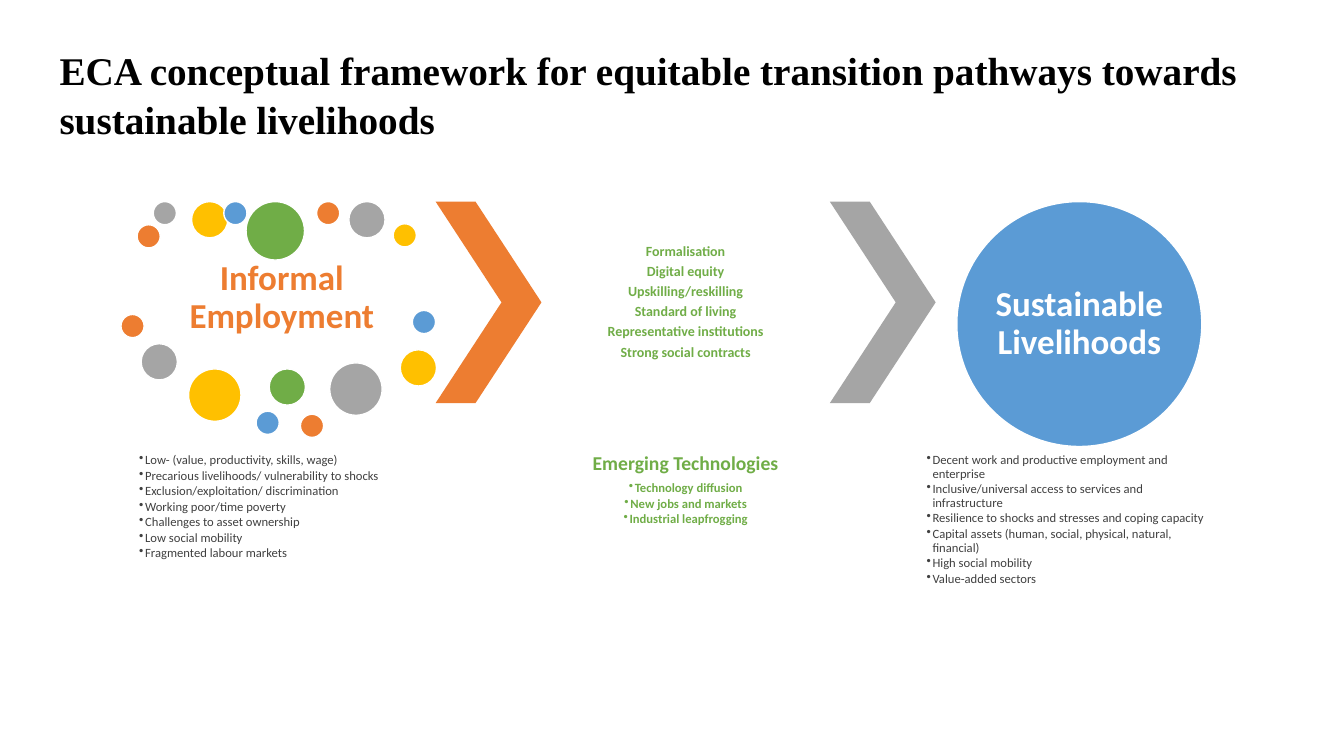
from lxml import etree
from pptx import Presentation
from pptx.dml.color import RGBColor
from pptx.enum.shapes import MSO_SHAPE
from pptx.enum.text import MSO_ANCHOR, MSO_AUTO_SIZE, PP_ALIGN
from pptx.oxml.ns import qn
from pptx.util import Inches, Pt

OVAL, CHEVRON = MSO_SHAPE.OVAL, MSO_SHAPE.CHEVRON
LEFT, CENTER = PP_ALIGN.LEFT, PP_ALIGN.CENTER
TOP, MIDDLE = MSO_ANCHOR.TOP, MSO_ANCHOR.MIDDLE
NO_FIT = MSO_AUTO_SIZE.NONE

ORANGE, GRAY, YELLOW = "ED7D31", "A5A5A5", "FFC000"
BLUE, GREEN, WHITE = "5B9BD5", "70AD47", "FFFFFF"
DARK, BLACK = "404040", "000000"

ROW_TOP, LIST_TOP = 2, 4.49
ROW_HEIGHT, LIST_HEIGHT = 2, 1.76
MIDDLE_LEFT, COLUMN_WIDTH = 5.37, 2.86
CHEVRON_WIDTH = 1.05
SMALL, MEDIUM, LARGE, HUGE = 0.23, 0.36, 0.52, 0.58

DOTS = [
    (1.36, 2.23, SMALL, ORANGE), (1.52, 2, SMALL, GRAY),
    (1.9, 2, MEDIUM, YELLOW), (2.22, 2, SMALL, BLUE),
    (3.14, 2, SMALL, ORANGE), (3.46, 2, MEDIUM, GRAY),
    (3.9, 2.22, SMALL, YELLOW), (4.09, 3.08, SMALL, BLUE),
    (2.44, 2, HUGE, GREEN), (1.2, 3.12, SMALL, ORANGE),
    (1.4, 3.41, MEDIUM, GRAY), (1.87, 3.66, LARGE, YELLOW),
    (2.54, 4.08, SMALL, BLUE), (2.67, 3.66, MEDIUM, GREEN),
    (2.98, 4.11, SMALL, ORANGE), (3.27, 3.6, LARGE, GRAY),
    (3.97, 3.47, MEDIUM, YELLOW),
]
INFORMAL_TRAITS = [
    "Low- (value, productivity, skills, wage)",
    "Precarious livelihoods/ vulnerability to shocks",
    "Exclusion/exploitation/ discrimination",
    "Working poor/time poverty",
    "Challenges to asset ownership",
    "Low social mobility",
    "Fragmented labour markets",
]
PATHWAYS = [
    "Formalisation",
    "Digital equity",
    "Upskilling/reskilling",
    "Standard of living",
    "Representative institutions",
    "Strong social contracts",
]
TECHNOLOGY_EFFECTS = [
    "Technology diffusion",
    "New jobs and markets",
    "Industrial leapfrogging",
]
LIVELIHOOD_TRAITS = [
    "Decent work and productive employment and enterprise",
    "Inclusive/universal access to services and infrastructure",
    "Resilience to shocks and stresses and coping capacity",
    "Capital assets (human, social, physical, natural, financial)",
    "High social mobility",
    "Value-added sectors",
]


def color(hex_text):
    """Turn a hex string into a colour."""
    return RGBColor.from_string(hex_text)


def prepare_frame(frame, anchor=TOP, inset=0.01):
    """Set wrapping, anchor and equal insets of a text frame."""
    frame.word_wrap = True
    frame.auto_size = NO_FIT
    frame.vertical_anchor = anchor
    frame.margin_left = frame.margin_right = Inches(inset)
    frame.margin_top = frame.margin_bottom = Inches(inset)


def add_bullet(para):
    """Give a paragraph a hanging bullet."""
    para.level = 1
    properties = para._p.get_or_add_pPr()
    properties.set("marL", str(Inches(0.06)))
    properties.set("indent", str(-Inches(0.06)))
    etree.SubElement(properties, qn("a:buChar")).set("char", "•")


def write(frame, text, size=9, fill=DARK, bold=False, align=LEFT,
          bullet=False, font="Calibri", spacing=0.9, gap=0.35):
    """Write one formatted paragraph, with a gap relative to its size."""
    para = frame.paragraphs[0]
    if para.runs:
        para = frame.add_paragraph()
    if bullet:
        add_bullet(para)
    para.alignment = align
    para.line_spacing = spacing
    para.space_after = Pt(size * gap)
    span = para.add_run()
    span.text = text
    span.font.name = font
    span.font.size = Pt(size)
    span.font.bold = bold
    span.font.color.rgb = color(fill)


def write_bullets(frame, items, **style):
    """Write a tight bulleted list."""
    for item in items:
        write(frame, item, bullet=True, gap=0.15, **style)


def add_text(page, left, top, width, height, **layout):
    """Add a text box and return its frame."""
    box = page.shapes.add_textbox(Inches(left), Inches(top),
                                  Inches(width), Inches(height))
    prepare_frame(box.text_frame, **layout)
    return box.text_frame


def add_filled(page, kind, left, top, width, height, fill):
    """Add a flat preset shape without an outline."""
    shape = page.shapes.add_shape(kind, Inches(left), Inches(top),
                                  Inches(width), Inches(height))
    shape.shadow.inherit = False
    shape.fill.solid()
    shape.fill.fore_color.rgb = color(fill)
    shape.line.fill.background()
    return shape


def add_circle(page, left, top, size, fill):
    """Add a circle with a thin white outline."""
    circle = add_filled(page, OVAL, left, top, size, size, fill)
    circle.line.color.rgb = color(WHITE)
    circle.line.width = Pt(1)
    return circle


def add_chevron(page, left, fill):
    """Add a chevron between two stages."""
    chevron = add_filled(page, CHEVRON, left, ROW_TOP, CHEVRON_WIDTH,
                         ROW_HEIGHT, fill)
    chevron.adjustments[0] = 0.623


def add_title(page, text):
    """Place and format the slide title."""
    title = page.shapes.title
    title.left, title.top = Inches(0.49), Inches(0.39)
    title.width, title.height = Inches(12.48), Inches(1.04)
    frame = title.text_frame
    prepare_frame(frame, inset=0.05)
    frame.margin_left = frame.margin_right = Inches(0.1)
    write(frame, text, size=28, fill=BLACK, bold=True,
          font="Times New Roman", spacing=1.04, gap=0)


def add_informal_employment(page):
    """Add the starting stage: heading, traits and scattered dots."""
    heading = add_text(page, 1.37, 2.49, 2.85, 0.94, anchor=MIDDLE, inset=0.03)
    write(heading, "Informal Employment", size=25, fill=ORANGE, bold=True,
          align=CENTER)
    traits = add_text(page, 1.37, LIST_TOP, 2.85, LIST_HEIGHT)
    write_bullets(traits, INFORMAL_TRAITS)
    for dot in DOTS:
        add_circle(page, *dot)


def add_pathways(page):
    """Add the middle stage between the two chevrons."""
    style = {"fill": GREEN, "bold": True, "align": CENTER}
    add_chevron(page, MIDDLE_LEFT - CHEVRON_WIDTH, ORANGE)
    pathways = add_text(page, MIDDLE_LEFT, ROW_TOP, COLUMN_WIDTH, ROW_HEIGHT,
                        anchor=MIDDLE)
    for pathway in PATHWAYS:
        write(pathways, pathway, size=10, **style)
    technologies = add_text(page, MIDDLE_LEFT, LIST_TOP, COLUMN_WIDTH,
                            LIST_HEIGHT)
    write(technologies, "Emerging Technologies", size=14, **style)
    write_bullets(technologies, TECHNOLOGY_EFFECTS, **style)
    add_chevron(page, MIDDLE_LEFT + COLUMN_WIDTH, GRAY)


def add_sustainable_livelihoods(page):
    """Add the final stage: large circle and its traits."""
    circle = add_circle(page, 9.49, ROW_TOP, 2.43, BLUE)
    prepare_frame(circle.text_frame, anchor=MIDDLE, inset=0)
    write(circle.text_frame, "Sustainable Livelihoods", size=25, fill=WHITE,
          bold=True, align=CENTER)
    traits = add_text(page, 9.18, LIST_TOP, COLUMN_WIDTH, LIST_HEIGHT)
    write_bullets(traits, LIVELIHOOD_TRAITS)


def main():
    """Build the slide and save the deck."""
    deck = Presentation()
    deck.slide_width, deck.slide_height = Inches(13.33), Inches(7.5)
    page = deck.slides.add_slide(deck.slide_layouts.get_by_name("Title Only"))
    add_title(page, "ECA conceptual framework for equitable transition "
                    "pathways towards sustainable livelihoods")
    add_informal_employment(page)
    add_pathways(page)
    add_sustainable_livelihoods(page)
    deck.save("out.pptx")


if __name__ == "__main__":
    main()
